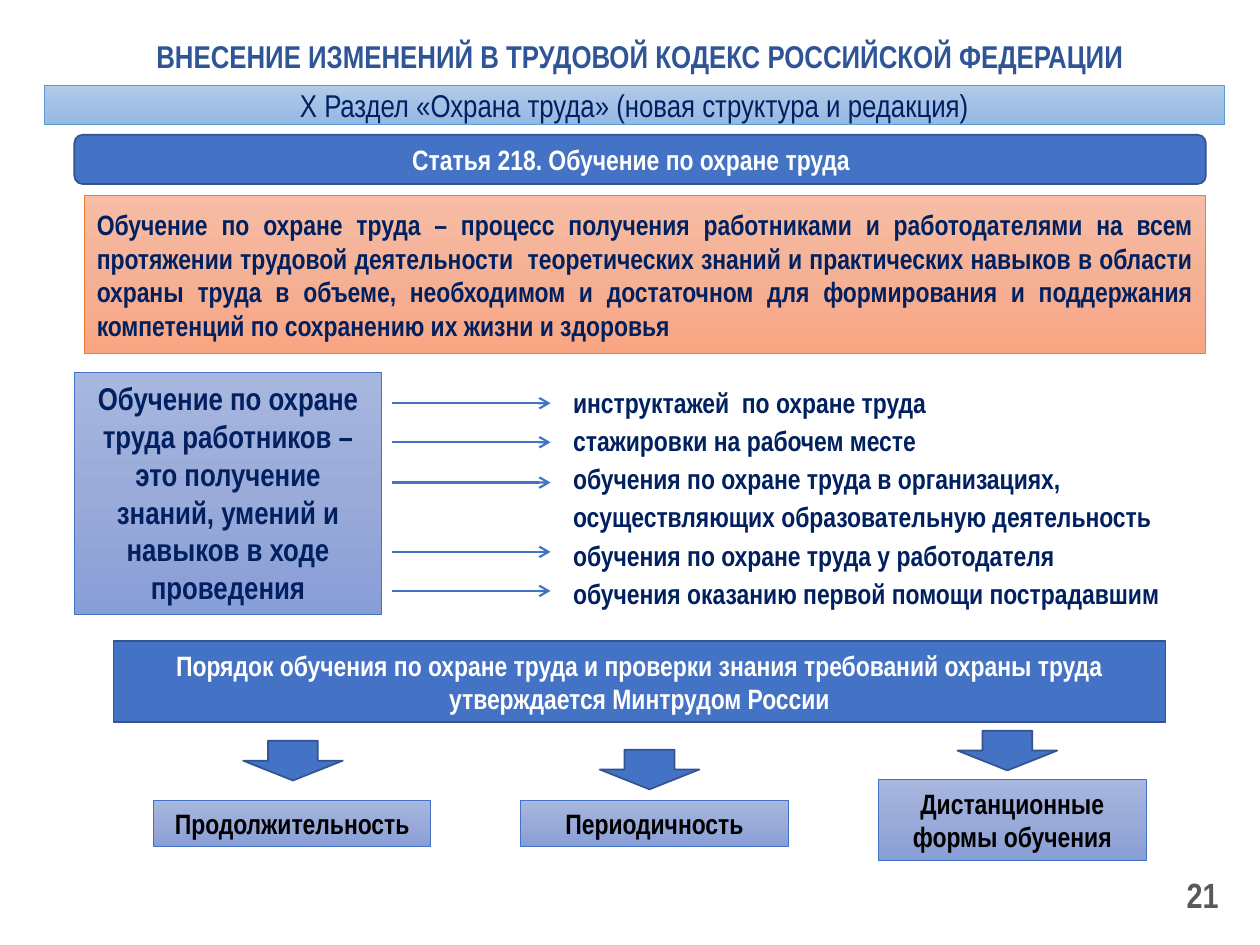
from copy import deepcopy

from lxml.etree import SubElement
from pptx import Presentation
from pptx.dml.color import RGBColor
from pptx.enum.shapes import MSO_CONNECTOR, MSO_SHAPE
from pptx.enum.text import MSO_ANCHOR, MSO_AUTO_SIZE, PP_ALIGN
from pptx.oxml.ns import qn
from pptx.util import Inches, Pt

COLUMNS = 100  # square cells: the 10 x 7.5 inch slide has 100 columns and 75 rows
TITLE_ONLY = 5
NAVY, BLUE, DARK_BLUE, WHITE, BLACK = "002060", "4472C4", "325491", "FFFFFF", "000000"
PERIWINKLE = ("A8B7DF", "9AABD9", "889ED7")
SKY = ("B1CBE9", "A3C1E5", "93B9E4")
SALMON = ("F7BDA5", "F5B196", "F8A582")


def colour(code):
    return RGBColor.from_string(code)


class SlideBuilder:
    font = "Arial Narrow"

    def __init__(self, deck):
        self.cell = deck.slide_width / COLUMNS
        self.page = deck.slides.add_slide(deck.slide_layouts[TITLE_ONLY])

    def lengths(self, *cells):
        return [round(cell * self.cell) for cell in cells]

    def set_text(self, shape, texts, size, ink, bold=True, align=PP_ALIGN.CENTER,
                 anchor=MSO_ANCHOR.MIDDLE, spacing=1.0, right_inset=1):
        frame = shape.text_frame
        margins = self.lengths(1, right_inset, 0.5, 0.5)
        frame_format = dict(zip(("margin_left", "margin_right", "margin_top", "margin_bottom"), margins),
                            word_wrap=True, auto_size=MSO_AUTO_SIZE.NONE, vertical_anchor=anchor)
        for name, value in frame_format.items():
            setattr(frame, name, value)
        for index, text in enumerate(texts):
            para = frame.add_paragraph() if index else frame.paragraphs[0]
            para.alignment, para.line_spacing = align, spacing
            span = para.add_run()
            span.text = text
            for name, value in dict(name=self.font, size=Pt(size), bold=bold).items():
                setattr(span.font, name, value)
            span.font.color.rgb = colour(ink)

    def title(self, area, text, size, ink):
        title = self.page.shapes.title
        for name, value in zip(("left", "top", "width", "height"), self.lengths(*area)):
            setattr(title, name, value)
        self.set_text(title, [text], size, ink)

    def text(self, area, texts, size, ink, **options):
        box = self.page.shapes.add_textbox(*self.lengths(*area))
        self.set_text(box, texts, size, ink, **options)

    def shape(self, kind, area, fill, line, line_width):
        """Add a preset shape; fill is one colour or three gradient colours."""
        shape = self.page.shapes.add_shape(kind, *self.lengths(*area))
        shape.shadow.inherit = False
        shape.line.color.rgb = colour(line)
        shape.line.width = Pt(line_width)
        if isinstance(fill, str):
            shape.fill.solid()
            shape.fill.fore_color.rgb = colour(fill)
        else:
            self.gradient(shape, fill)
        return shape

    def gradient(self, shape, colours):
        shape.fill.gradient()
        shape.fill.gradient_angle = 270
        stop_list = shape.element.spPr.find(qn("a:gradFill")).find(qn("a:gsLst"))
        stop_list.insert(1, deepcopy(stop_list[0]))
        for stop, code, position in zip(shape.fill.gradient_stops, colours, (0, 0.5, 1)):
            stop.color.rgb = colour(code)
            stop.position = position

    def solid_box(self, kind, area, text, **options):
        box = self.shape(kind, area, BLUE, DARK_BLUE, 1)
        self.set_text(box, [text], 16, WHITE, **options)

    def gradient_box(self, area, text, fill, line, size, ink, **options):
        box = self.shape(MSO_SHAPE.RECTANGLE, area, fill, line, 0.5)
        self.set_text(box, [text], size, ink, **options)

    def arrow(self, start, end, row):
        arrow = self.page.shapes.add_connector(
            MSO_CONNECTOR.STRAIGHT, *self.lengths(start, row, end, row))
        arrow.line.color.rgb = colour(BLUE)
        arrow.line.width = Pt(1.25)
        properties = arrow.element.spPr
        SubElement(properties.find(qn("a:ln")), qn("a:tailEnd"), type="arrow")
        SubElement(properties, qn("a:effectLst"))


def main():
    deck = Presentation()
    deck.slide_width, deck.slide_height = Inches(10), Inches(7.5)
    slide = SlideBuilder(deck)

    slide.title((8.3, 1.3, 85, 6.3),
                "ВНЕСЕНИЕ ИЗМЕНЕНИЙ В ТРУДОВОЙ КОДЕКС РОССИЙСКОЙ ФЕДЕРАЦИИ", 18, "2F5597")
    slide.gradient_box((3.5, 6.8, 93.7, 3.1), "Х Раздел «Охрана труда» (новая структура и редакция)",
                       SKY, "5B9BD5", 18, NAVY, bold=False)
    slide.solid_box(MSO_SHAPE.ROUNDED_RECTANGLE, (5.9, 10.7, 89.8, 3.9),
                    "Статья 218. Обучение по охране труда", right_inset=2.4)
    slide.gradient_box(
        (6.7, 15.5, 89, 12.6),
        "Обучение по охране труда – процесс получения работниками и работодателями на всем "
        "протяжении трудовой деятельности  теоретических знаний и практических навыков в области "
        "охраны труда в объеме, необходимом и достаточном для формирования и поддержания "
        "компетенций по сохранению их жизни и здоровья",
        SALMON, "ED7D31", 16, NAVY, align=PP_ALIGN.JUSTIFY)

    slide.gradient_box(
        (5.9, 29.6, 24.4, 19.2),
        "Обучение по охране труда работников – это получение знаний, умений и навыков в ходе проведения",
        PERIWINKLE, BLUE, 18, NAVY, anchor=MSO_ANCHOR.TOP)
    for row in (32, 35.1, 38.3, 43.8, 46.9):
        slide.arrow(31.1, 43.7, row)
    slide.text((44.5, 29.6, 52.8, 19.4),
               ["инструктажей  по охране труда",
                "стажировки на рабочем месте",
                "обучения по охране труда в организациях, осуществляющих образовательную деятельность",
                "обучения по охране труда у работодателя",
                "обучения оказанию первой помощи пострадавшим"],
               16, NAVY, align=PP_ALIGN.LEFT, spacing=1.14)

    slide.solid_box(MSO_SHAPE.RECTANGLE, (9, 50.9, 83.5, 6.4),
                    "Порядок обучения по охране труда и проверки знания требований охраны труда "
                    "утверждается Минтрудом России")
    topics = [
        ("Продолжительность", (12.2, 63.5, 22, 3.7), (19.3, 58.8)),
        ("Периодичность", (41.3, 63.5, 21.3, 3.7), (47.6, 59.5)),
        ("Дистанционные формы обучения", (69.7, 61.9, 21.3, 6.4), (76, 58)),
    ]
    for text, area, arrow_corner in topics:
        slide.shape(MSO_SHAPE.DOWN_ARROW, (*arrow_corner, 7.9, 3.15), BLUE, DARK_BLUE, 1)
        slide.gradient_box(area, text, PERIWINKLE, BLUE, 16, BLACK, anchor=MSO_ANCHOR.TOP)

    slide.text((74.4, 69, 23.3, 4), ["21"], 20, "595959", align=PP_ALIGN.RIGHT)
    deck.save("out.pptx")


if __name__ == "__main__":
    main()
